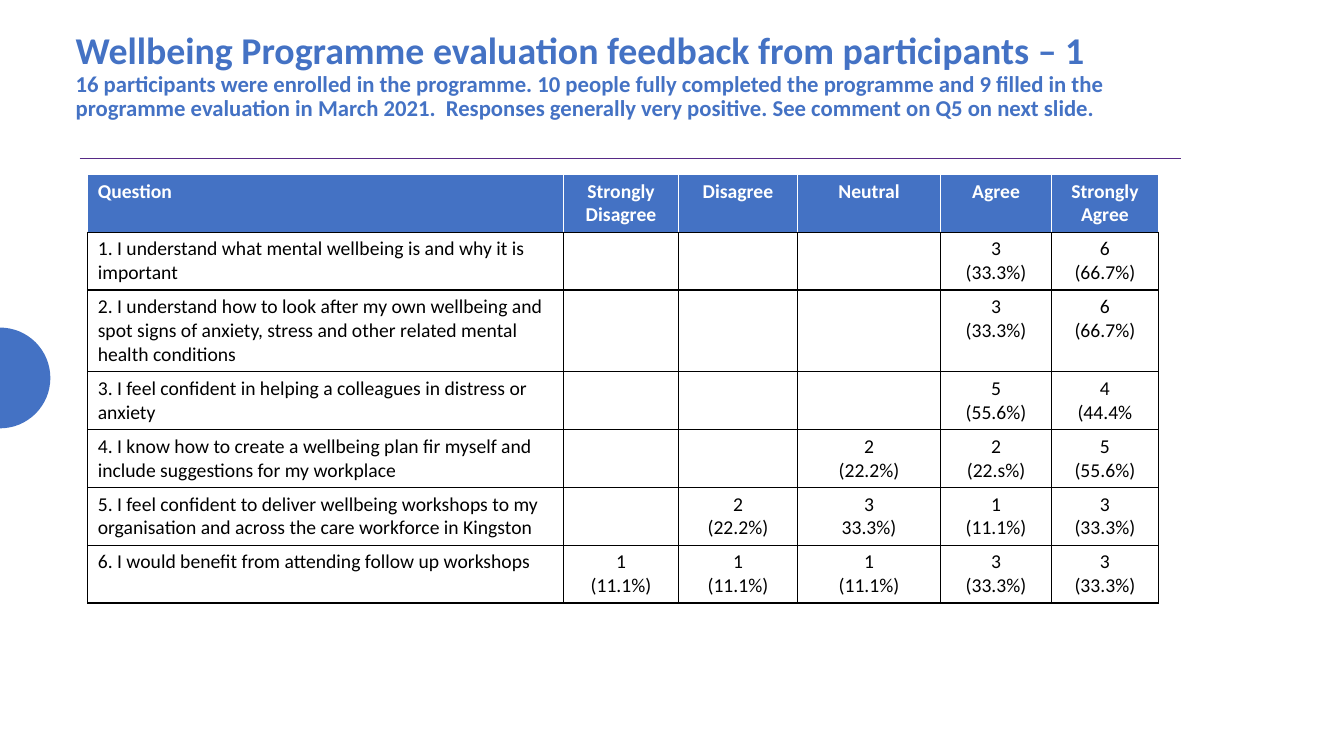
"""Build the wellbeing programme evaluation slide."""
from math import cos, pi, sin

from lxml.etree import SubElement
from pptx import Presentation
from pptx.dml.color import RGBColor
from pptx.enum.shapes import MSO_CONNECTOR
from pptx.enum.text import MSO_ANCHOR, MSO_AUTO_SIZE, PP_ALIGN
from pptx.oxml.ns import qn
from pptx.util import Inches, Pt

FONT = "Calibri"
BLUE, PURPLE, WHITE, BLACK = "4472C4", "572A86", "FFFFFF", "000000"
HEADING = "Wellbeing Programme evaluation feedback from participants – 1"
SUMMARY = (
    "16 participants were enrolled in the programme. 10 people fully completed "
    "the programme and 9 filled in the programme evaluation in March 2021.  "
    "Responses generally very positive. See comment on Q5 on next slide."
)
COLUMN_WIDTHS = [4.72, 1.14, 1.18, 1.42, 1.1, 1.06]
ROW_HEIGHTS = [0.57, 0.57, 0.81, 0.57, 0.57, 0.57, 0.57]
RESPONSES = [
    ["Question", "Strongly Disagree", "Disagree", "Neutral", "Agree", "Strongly Agree"],
    ["1. I understand what mental wellbeing is and why it is important",
     "", "", "", "3\n(33.3%)", "6\n(66.7%)"],
    ["2. I understand how to look after my own wellbeing and spot signs of anxiety, "
     "stress and other related mental health conditions",
     "", "", "", "3\n(33.3%)", "6\n(66.7%)"],
    ["3. I feel confident in helping a colleagues in distress or anxiety",
     "", "", "", "5\n(55.6%)", "4\n(44.4%"],
    ["4. I know how to create a wellbeing plan fir myself and include suggestions "
     "for my workplace",
     "", "", "2\n(22.2%)", "2\n(22.s%)", "5\n(55.6%)"],
    ["5. I feel confident to deliver wellbeing workshops to my organisation and "
     "across the care workforce in Kingston",
     "", "2\n(22.2%)", "3\n33.3%)", "1\n(11.1%)", "3\n(33.3%)"],
    ["6. I would benefit from attending follow up workshops",
     "1\n(11.1%)", "1\n(11.1%)", "1\n(11.1%)", "3\n(33.3%)", "3\n(33.3%)"],
]


def color(value):
    return RGBColor.from_string(value)


def format_font(font, size, value, bold):
    font.name = FONT
    font.size = Pt(size)
    font.bold = bold
    font.color.rgb = color(value)


def add_half_circle(slide, center_y, radius, steps=32):
    angles = [pi / 2 - pi * step / steps for step in range(steps + 1)]
    points = [
        (Inches(radius * cos(angle)), Inches(center_y + radius * sin(angle)))
        for angle in angles
    ]
    builder = slide.shapes.build_freeform(*points[0])
    builder.add_line_segments(points[1:], close=True)
    shape = builder.convert_to_shape()
    shape.shadow.inherit = False
    shape.fill.solid()
    shape.fill.fore_color.rgb = color(BLUE)
    shape.line.fill.background()


def add_rule(slide, left, right, top):
    line = slide.shapes.add_connector(
        MSO_CONNECTOR.STRAIGHT, Inches(left), Inches(top), Inches(right), Inches(top)
    )
    line.line.color.rgb = color(PURPLE)
    line.line.width = Pt(0.5)
    SubElement(line._element.spPr, qn("a:effectLst"))


def fill_title(title):
    title.left, title.top = Inches(0.65), Inches(0.27)
    title.width, title.height = Inches(11.05), Inches(0.98)
    frame = title.text_frame
    frame.text = f"{HEADING}\v{SUMMARY}"
    frame.word_wrap = True
    frame.auto_size = MSO_AUTO_SIZE.NONE
    frame.vertical_anchor = MSO_ANCHOR.MIDDLE
    paragraph = frame.paragraphs[0]
    paragraph.alignment = PP_ALIGN.LEFT
    paragraph.line_spacing = 0.9
    for run, size in zip(paragraph.runs, (27, 16.2)):
        format_font(run.font, size, BLUE, True)
    line_break = paragraph._p.find(qn("a:br"))
    SubElement(line_break, qn("a:rPr"), sz="2700")


def set_borders(cell, side_color, top_color):
    properties = cell._tc.get_or_add_tcPr()
    sides = {"lnL": side_color, "lnR": side_color, "lnT": top_color, "lnB": BLACK}
    for side, value in sides.items():
        line = SubElement(properties, qn(f"a:{side}"), w=str(Pt(1)))
        fill = SubElement(line, qn("a:solidFill"))
        SubElement(fill, qn("a:srgbClr"), val=value)


def fill_cell(cell, text, is_header, is_question):
    set_borders(cell, WHITE if is_header else BLACK, WHITE if is_header else BLACK)
    if is_header:
        cell.fill.solid()
        cell.fill.fore_color.rgb = color(BLUE)
    else:
        cell.fill.background()
    cell.text_frame.text = text
    for paragraph in cell.text_frame.paragraphs:
        paragraph.alignment = PP_ALIGN.LEFT if is_question else PP_ALIGN.CENTER
        for run in paragraph.runs:
            format_font(run.font, 14, WHITE if is_header else BLACK, is_header)


def add_response_table(slide, left, top):
    table = slide.shapes.add_table(
        len(RESPONSES), len(COLUMN_WIDTHS), Inches(left), Inches(top),
        Inches(sum(COLUMN_WIDTHS)), Inches(sum(ROW_HEIGHTS)),
    ).table
    table.horz_banding = False
    for column, width in zip(table.columns, COLUMN_WIDTHS):
        column.width = Inches(width)
    for row, height in zip(table.rows, ROW_HEIGHTS):
        row.height = Inches(height)
    for row_index, texts in enumerate(RESPONSES):
        for column_index, text in enumerate(texts):
            cell = table.cell(row_index, column_index)
            fill_cell(cell, text, row_index == 0, column_index == 0)


def main():
    presentation = Presentation()
    presentation.slide_width = Inches(13.33)
    presentation.slide_height = Inches(7.5)
    slide = presentation.slides.add_slide(presentation.slide_layouts[5])
    add_half_circle(slide, center_y=3.75, radius=0.5)
    add_rule(slide, left=0.79, right=11.71, top=1.57)
    fill_title(slide.shapes.title)
    add_response_table(slide, left=0.87, top=1.73)
    presentation.save("out.pptx")


if __name__ == "__main__":
    main()
